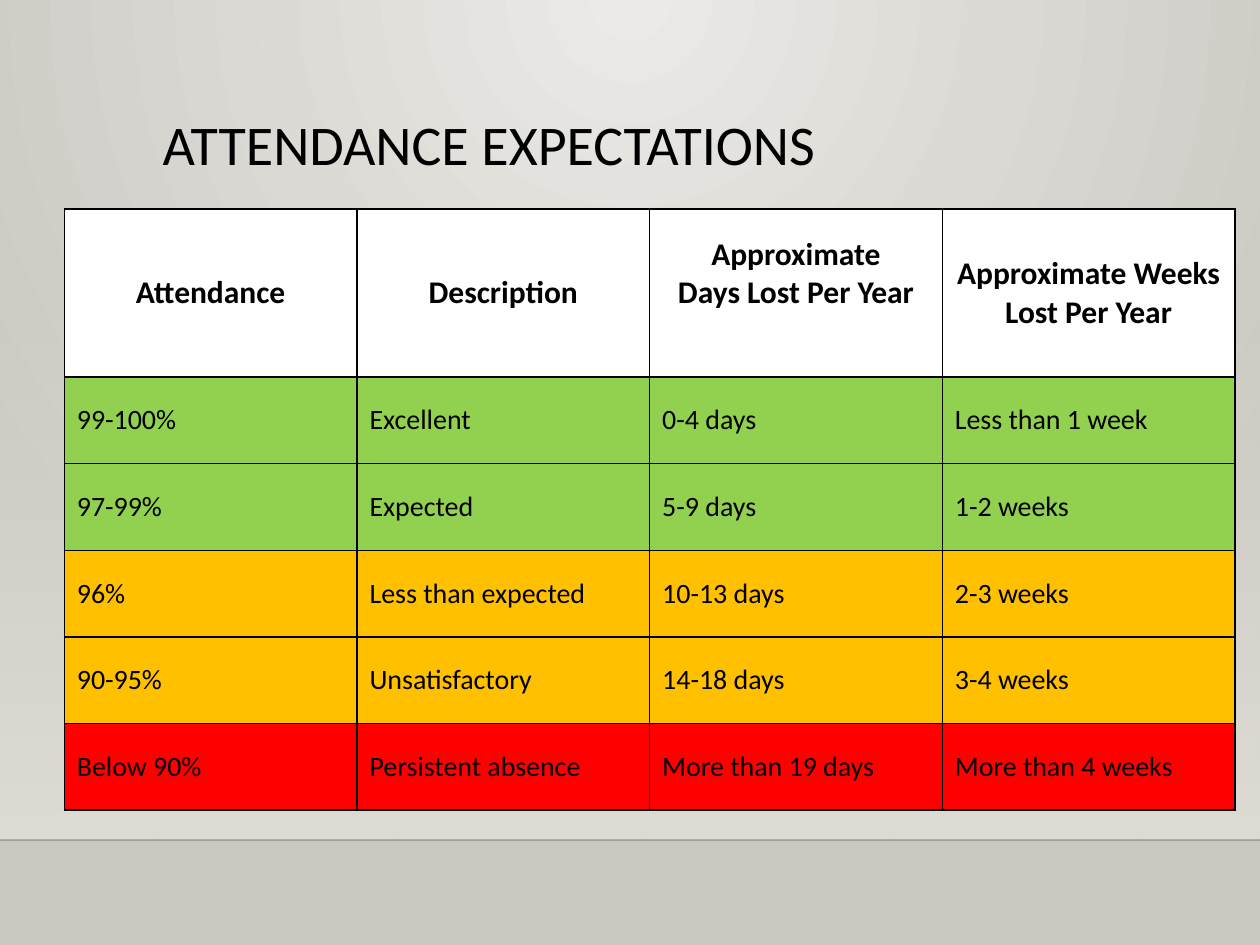
from typing import NamedTuple

from lxml.etree import SubElement
from pptx import Presentation
from pptx.dml.color import RGBColor
from pptx.enum.shapes import MSO_CONNECTOR, MSO_SHAPE
from pptx.enum.text import MSO_ANCHOR, PP_ALIGN
from pptx.oxml import parse_xml
from pptx.oxml.ns import nsdecls, qn
from pptx.util import Pt

SLIDE_W, SLIDE_H = 720, 540
FLOOR_Y = 480
BLACK, GREEN, AMBER, RED = "000000", "92D050", "FFC000", "FF0000"
COL_W, HEADER_H, ROW_H = 167.25, 96, 49.5
HEADER_LINE_H = 22


class Band(NamedTuple):
    attendance: str
    description: str
    days: str
    weeks: str
    color: str


HEADERS = ["Attendance", "Description", "Approximate\nDays Lost Per Year",
           "Approximate Weeks Lost Per Year"]
BANDS = [
    Band("99-100%", "Excellent", "0-4 days", "Less than 1 week", GREEN),
    Band("97-99%", "Expected", "5-9 days", "1-2 weeks", GREEN),
    Band("96%", "Less than expected", "10-13 days", "2-3 weeks", AMBER),
    Band("90-95%", "Unsatisfactory", "14-18 days", "3-4 weeks", AMBER),
    Band("Below 90%", "Persistent absence", "More than 19 days", "More than 4 weeks", RED),
]


def rgb(color: str) -> RGBColor:
    return RGBColor.from_string(color)


def format_text(tf, align=PP_ALIGN.LEFT, **font) -> None:
    values = {"name": "Calibri", "bold": False, **font}
    for p in tf.paragraphs:
        p.alignment = align
        for r in p.runs:
            r.font.color.rgb = rgb(BLACK)
            for name, value in values.items():
                setattr(r.font, name, value)


def set_gradient(fill, first: str, last: str) -> None:
    fill.gradient()
    for stop, color in zip(fill.gradient_stops, (first, last)):
        stop.color.rgb = rgb(color)


def set_alpha(color_element, percent: int) -> None:
    SubElement(color_element, qn("a:alpha"), val=str(percent * 1000))


def add_borders(cell) -> None:
    tcPr = cell._tc.get_or_add_tcPr()
    for i, side in enumerate("LRTB"):
        tcPr.insert(i, parse_xml(
            f'<a:ln{side} {nsdecls("a")} w="12700"><a:solidFill><a:srgbClr val="{BLACK}"/>'
            f'</a:solidFill><a:prstDash val="solid"/></a:ln{side}>'))


def fill_cell(cell, text: str, color: str, **text_format) -> None:
    cell.text = text
    cell.vertical_anchor = MSO_ANCHOR.MIDDLE
    cell.fill.solid()
    cell.fill.fore_color.rgb = rgb(color)
    format_text(cell.text_frame, **text_format)
    add_borders(cell)


def add_backdrop(s) -> None:
    # Radial background centred on the top edge
    set_gradient(s.background.fill, "ECEAE7", "CAC7C1")
    grad = s.background._cSld.find(".//" + qn("a:gradFill"))
    grad.replace(grad.find(qn("a:lin")), parse_xml(
        f'<a:path {nsdecls("a")} path="circle">'
        '<a:fillToRect l="43000" t="0" r="43000" b="100000"/></a:path>'))

    # Wall fading in towards the floor
    wall = s.shapes.add_shape(MSO_SHAPE.RECTANGLE, 0, Pt(158.5),
                              Pt(SLIDE_W), Pt(FLOOR_Y - 158.5))
    wall.shadow.inherit = False
    wall.line.fill.background()
    set_gradient(wall.fill, "DFDBD5", "DFDBD5")
    wall.fill.gradient_angle = 270
    set_alpha(wall.element.find(".//" + qn("a:srgbClr")), 0)

    # Floor edge
    edge = s.shapes.add_connector(MSO_CONNECTOR.STRAIGHT, 0, Pt(FLOOR_Y),
                                  Pt(SLIDE_W), Pt(FLOOR_Y))
    edge.line.width = Pt(1)
    edge.line.color.rgb = rgb("000001")
    set_alpha(edge.element.find(".//" + qn("a:srgbClr")), 20)
    SubElement(edge.element.spPr, qn("a:effectLst"))


def add_title(s, text: str) -> None:
    title = s.shapes.title
    title.element.getparent().append(title.element)
    box = {"left": 85.75, "top": 63.25, "width": 567.25, "height": 82.75}
    for name, value in box.items():
        setattr(title, name, Pt(value))
    tf = title.text_frame
    tf.text = text
    tf.word_wrap = True
    tf.vertical_anchor = MSO_ANCHOR.TOP
    tf.paragraphs[0].line_spacing = 0.9
    format_text(tf, size=Pt(32))


def add_attendance_table(s) -> None:
    rows, cols = len(BANDS) + 1, len(HEADERS)
    table = s.shapes.add_table(rows, cols, Pt(36.75), Pt(119.5), Pt(COL_W * cols),
                               Pt(HEADER_H + ROW_H * len(BANDS))).table
    table.first_row = table.horz_banding = False
    for column in table.columns:
        column.width = Pt(COL_W)
    for i, row in enumerate(table.rows):
        row.height = Pt(ROW_H if i else HEADER_H)

    for c, text in enumerate(HEADERS):
        fill_cell(table.cell(0, c), text, "FFFFFF",
                  align=PP_ALIGN.CENTER, size=Pt(18), bold=True)
    # The days heading sits half a line above the middle
    table.cell(0, 2).margin_bottom = Pt(3.6 + HEADER_LINE_H)

    for i, band in enumerate(BANDS, 1):
        for c, text in enumerate(band[:cols]):
            fill_cell(table.cell(i, c), text, band.color, size=Pt(16))


def main() -> None:
    prs = Presentation()
    prs.slide_width, prs.slide_height = Pt(SLIDE_W), Pt(SLIDE_H)
    s = prs.slides.add_slide(prs.slide_layouts[5])
    add_backdrop(s)
    add_title(s, "ATTENDANCE EXPECTATIONS")
    add_attendance_table(s)
    prs.save("out.pptx")


if __name__ == "__main__":
    main()
